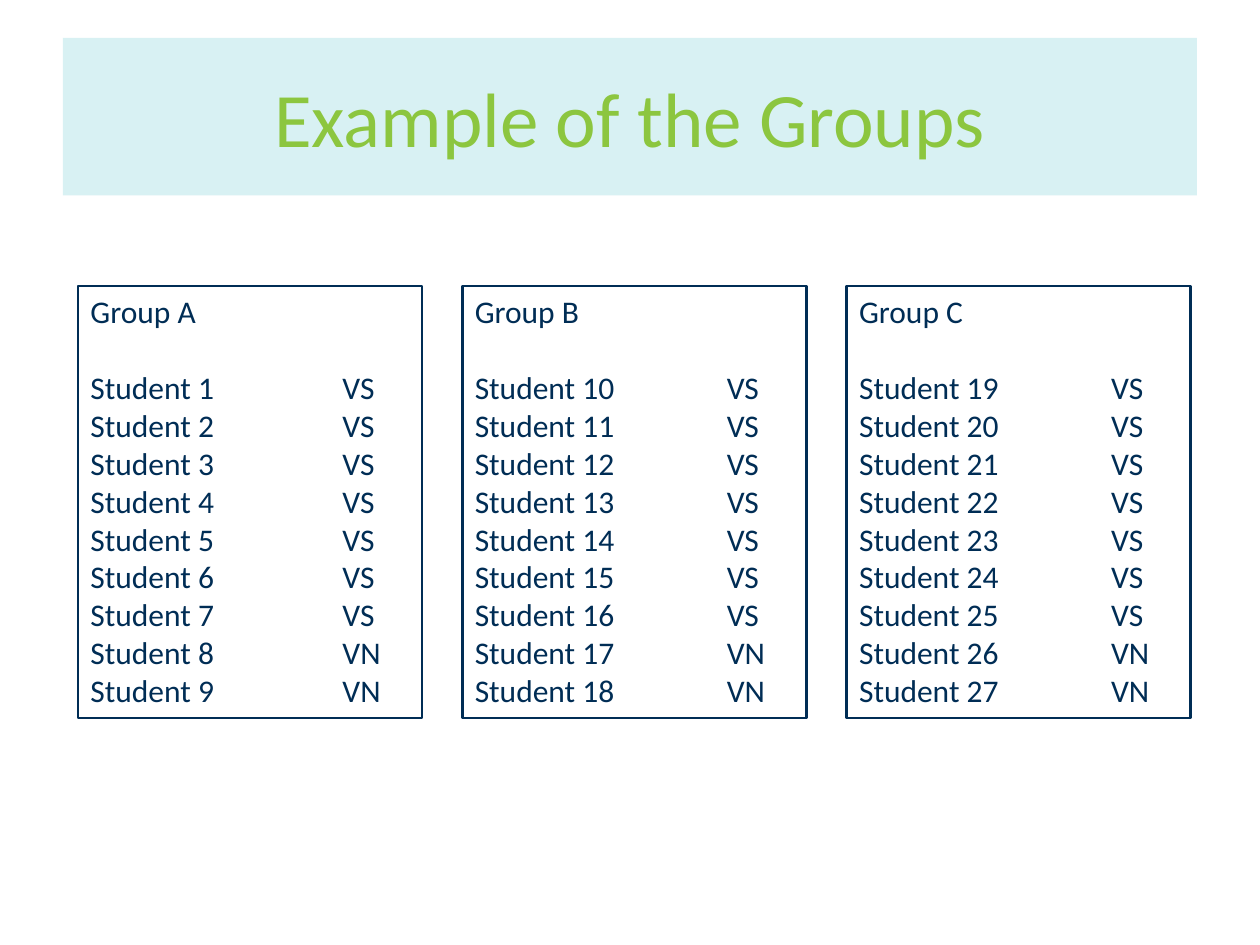
from dataclasses import dataclass

from lxml import etree
from pptx import Presentation
from pptx.dml.color import RGBColor
from pptx.enum.shapes import MSO_SHAPE
from pptx.enum.text import MSO_ANCHOR, MSO_AUTO_SIZE, PP_ALIGN
from pptx.oxml.ns import qn
from pptx.util import Inches, Pt

RECTANGLE = MSO_SHAPE.RECTANGLE
MIDDLE, TOP = MSO_ANCHOR.MIDDLE, MSO_ANCHOR.TOP
CENTER, LEFT = PP_ALIGN.CENTER, PP_ALIGN.LEFT
FIT_SHAPE = MSO_AUTO_SIZE.SHAPE_TO_FIT_TEXT

AQUA = RGBColor(0x64, 0xC8, 0xD0)
GREEN = RGBColor(0x8C, 0xC6, 0x3F)
NAVY = RGBColor(0x00, 0x2D, 0x55)

FONT = "Calibri"
SLIDE_W, SLIDE_H = Inches(10), Inches(7.5)
BANNER_ALPHA = 25  # percent

GRID_LEFT, GRID_TOP = Inches(0.62), Inches(2.27)
COLUMN_STEP = Inches(3.05)
BOX_W, BOX_H = Inches(2.73), Inches(3.43)
CODE_TAB = Inches(2)
LINE_HEIGHT = Pt(22)
GROUP_SIZE = 9


@dataclass(frozen=True)
class Group:
    name: str
    column: int
    codes: tuple[str, ...] = ("VS",) * 7 + ("VN",) * 2

    @property
    def first_student(self) -> int:
        return self.column * GROUP_SIZE + 1


GROUPS = [Group(f"Group {letter}", column) for column, letter in enumerate("ABC")]


def add_box(slide, left: int, top: int, width: int, height: int, anchor):
    s = slide.shapes.add_shape(RECTANGLE, left, top, width, height)
    s.shadow.inherit = False
    s.text_frame.word_wrap = True
    s.text_frame.vertical_anchor = anchor
    return s


def add_text(p, text: str, size: int, color: RGBColor, align) -> None:
    p.alignment = align
    r = p.add_run()
    r.text = text
    r.font.name = FONT
    r.font.size = Pt(size)
    r.font.color.rgb = color


def add_tab_stop(p, position: int) -> None:
    tabs = etree.SubElement(p._p.get_or_add_pPr(), qn("a:tabLst"))
    etree.SubElement(tabs, qn("a:tab"), pos=str(position), algn="l")


def add_banner(slide, title: str) -> None:
    s = add_box(slide, int(SLIDE_W * 0.05), int(SLIDE_H * 0.04),
                int(SLIDE_W * 0.9), int(SLIDE_H / 6), MIDDLE)
    s.fill.solid()
    s.fill.fore_color.rgb = AQUA
    color = s._element.spPr.find(qn("a:solidFill")).find(qn("a:srgbClr"))
    etree.SubElement(color, qn("a:alpha"), val=str(BANNER_ALPHA * 1000))
    s.line.fill.background()
    add_text(s.text_frame.paragraphs[0], title, 44, GREEN, CENTER)


def add_group(slide, group: Group) -> None:
    s = add_box(slide, GRID_LEFT + group.column * COLUMN_STEP, GRID_TOP,
                BOX_W, BOX_H, TOP)
    s.fill.background()
    s.line.color.rgb = NAVY
    s.line.width = Pt(1.5)
    tf = s.text_frame
    tf.auto_size = FIT_SHAPE
    heading = tf.paragraphs[0]
    add_text(heading, group.name, 18, NAVY, LEFT)
    heading.space_after = LINE_HEIGHT
    for number, code in enumerate(group.codes, group.first_student):
        p = tf.add_paragraph()
        add_text(p, f"Student {number}\t{code}", 18, NAVY, LEFT)
        add_tab_stop(p, CODE_TAB)


def main() -> None:
    prs = Presentation()
    prs.slide_width, prs.slide_height = SLIDE_W, SLIDE_H
    slide = prs.slides.add_slide(prs.slide_layouts[6])
    add_banner(slide, "Example of the Groups")
    for group in GROUPS:
        add_group(slide, group)
    prs.save("out.pptx")


if __name__ == "__main__":
    main()
